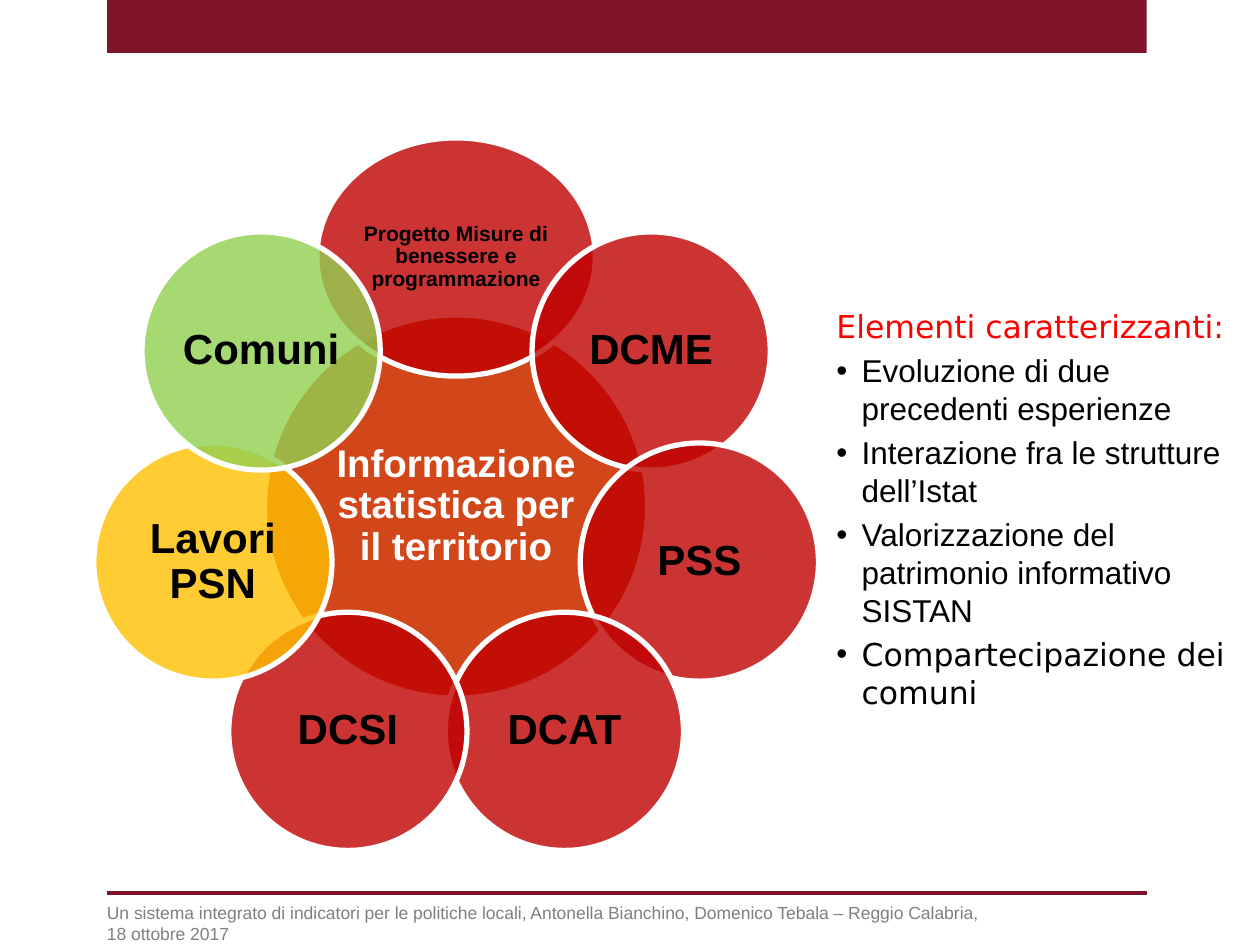
from math import cos, pi, sin

from lxml.etree import SubElement
from pptx import Presentation
from pptx.dml.color import RGBColor
from pptx.enum.shapes import MSO_CONNECTOR as CONN, MSO_SHAPE as SHAPE
from pptx.enum.text import MSO_ANCHOR as ANCHOR, PP_ALIGN as ALIGN
from pptx.oxml.ns import qn
from pptx.util import Inches, Pt

WIDTH, HEIGHT = 10, 7.5
LEFT, RIGHT = 0.085 * WIDTH, 0.91 * WIDTH
CENTER_X, CENTER_Y = 3.62, 4.02
RING_RADIUS, PETAL, CORE = 1.98, 1.89, 3.04
BULLET_INDENT = 0.2

WINE = RGBColor(0x7F, 0x14, 0x2A)
ORANGE = RGBColor(0xCC, 0x33, 0x00)
DARK_RED = RGBColor(0xC0, 0x00, 0x00)
GOLD = RGBColor(0xFF, 0xC0, 0x00)
GREEN = RGBColor(0x92, 0xD0, 0x50)
RED = RGBColor(0xFF, 0x00, 0x00)
GRAY = RGBColor(0x7F, 0x7F, 0x7F)
WHITE = RGBColor(0xFF, 0xFF, 0xFF)
BLACK = RGBColor(0x00, 0x00, 0x00)

PETALS = [
    ("Progetto Misure di benessere e programmazione", DARK_RED, 2.21, 12),
    ("DCME", DARK_RED, PETAL, 24),
    ("PSS", DARK_RED, PETAL, 24),
    ("DCAT", DARK_RED, PETAL, 24),
    ("DCSI", DARK_RED, PETAL, 24),
    ("Lavori PSN", GOLD, PETAL, 24),
    ("Comuni", GREEN, PETAL, 24),
]
FEATURES = [
    ("Evoluzione di due precedenti esperienze", "Arial"),
    ("Interazione fra le strutture dell’Istat", "Arial"),
    ("Valorizzazione del patrimonio informativo SISTAN", "Arial"),
    ("Compartecipazione dei comuni", "DejaVu Sans"),
]
FOOTER = ("Un sistema integrato di indicatori per le politiche locali, Antonella Bianchino, "
          "Domenico Tebala – Reggio Calabria, 18 ottobre 2017")


def write(p, text, size=18, font="Arial", color=BLACK, bold=False, align=ALIGN.LEFT,
          spacing=None, before=None):
    p.alignment = align
    p.line_spacing = spacing
    p.space_before = before
    r = p.add_run()
    r.text = text
    r.font.size = Pt(size)
    r.font.name = font
    r.font.bold = bold
    r.font.color.rgb = color


def set_indent(p, bullet=None):
    pPr = p._p.get_or_add_pPr()
    pPr.set("marL", str(Inches(BULLET_INDENT)))
    pPr.set("indent", str(-Inches(BULLET_INDENT)))
    if bullet:
        SubElement(pPr, qn("a:buFont"), typeface="Arial")
        SubElement(pPr, qn("a:buChar"), char=bullet)


def add_band(slide):
    sp = slide.shapes.add_shape(SHAPE.RECTANGLE, Inches(LEFT), 0,
                                Inches(RIGHT - LEFT), Inches(0.056 * HEIGHT))
    sp.shadow.inherit = False
    sp.fill.solid()
    sp.fill.fore_color.rgb = WINE
    sp.line.fill.background()


def add_rule(slide, y):
    line = slide.shapes.add_connector(CONN.STRAIGHT, Inches(LEFT), Inches(y),
                                      Inches(RIGHT), Inches(y))
    line.line.color.rgb = WINE
    line.line.width = Pt(2)
    SubElement(line._element.spPr, qn("a:effectLst"))


def add_circle(slide, x, y, w, h, text, fill, opacity, size, color=BLACK):
    sp = slide.shapes.add_shape(SHAPE.OVAL, Inches(x - w / 2), Inches(y - h / 2),
                                Inches(w), Inches(h))
    sp.shadow.inherit = False
    sp.fill.solid()
    sp.fill.fore_color.rgb = fill
    srgb = sp._element.spPr.find(qn("a:solidFill")).find(qn("a:srgbClr"))
    SubElement(srgb, qn("a:alpha"), val=str(opacity * 1000))
    sp.line.color.rgb = WHITE
    sp.line.width = Pt(3)
    tf = sp.text_frame
    tf.word_wrap = True
    tf.vertical_anchor = ANCHOR.MIDDLE
    tf.margin_left = tf.margin_right = tf.margin_top = tf.margin_bottom = Inches(0.03)
    write(tf.paragraphs[0], text, size=size, color=color, bold=True,
          align=ALIGN.CENTER, spacing=0.9)


def add_flower(slide):
    add_circle(slide, CENTER_X, CENTER_Y, CORE, CORE,
               "Informazione statistica per il territorio", ORANGE, 90, 22, WHITE)
    for i, (text, fill, width, size) in enumerate(PETALS):
        angle = 2 * pi * i / len(PETALS)
        add_circle(slide, CENTER_X + RING_RADIUS * sin(angle),
                   CENTER_Y - RING_RADIUS * cos(angle), width, PETAL, text, fill, 80, size)


def add_text_box(slide, x, y, w, h):
    sp = slide.shapes.add_textbox(Inches(x), Inches(y), Inches(w), Inches(h))
    sp.text_frame.word_wrap = True
    return sp.text_frame


def add_features(slide):
    tf = add_text_box(slide, 6.54, 2.39, 3.3, 3.37)
    p = tf.paragraphs[0]
    set_indent(p)
    write(p, "Elementi caratterizzanti:", font="DejaVu Sans", color=RED)
    for text, font in FEATURES:
        p = tf.add_paragraph()
        set_indent(p, "•")
        write(p, text, font=font, before=Pt(3.6))


def add_footer(slide):
    tf = add_text_box(slide, 0.75, 7.11, 7.21, 0.44)
    write(tf.paragraphs[0], FOOTER, size=10, color=GRAY)


def main():
    prs = Presentation()
    prs.slide_width, prs.slide_height = Inches(WIDTH), Inches(HEIGHT)
    slide = prs.slides.add_slide(prs.slide_layouts[6])
    add_band(slide)
    add_rule(slide, 0.945 * HEIGHT)
    add_flower(slide)
    add_features(slide)
    add_footer(slide)
    prs.save("out.pptx")


if __name__ == "__main__":
    main()
